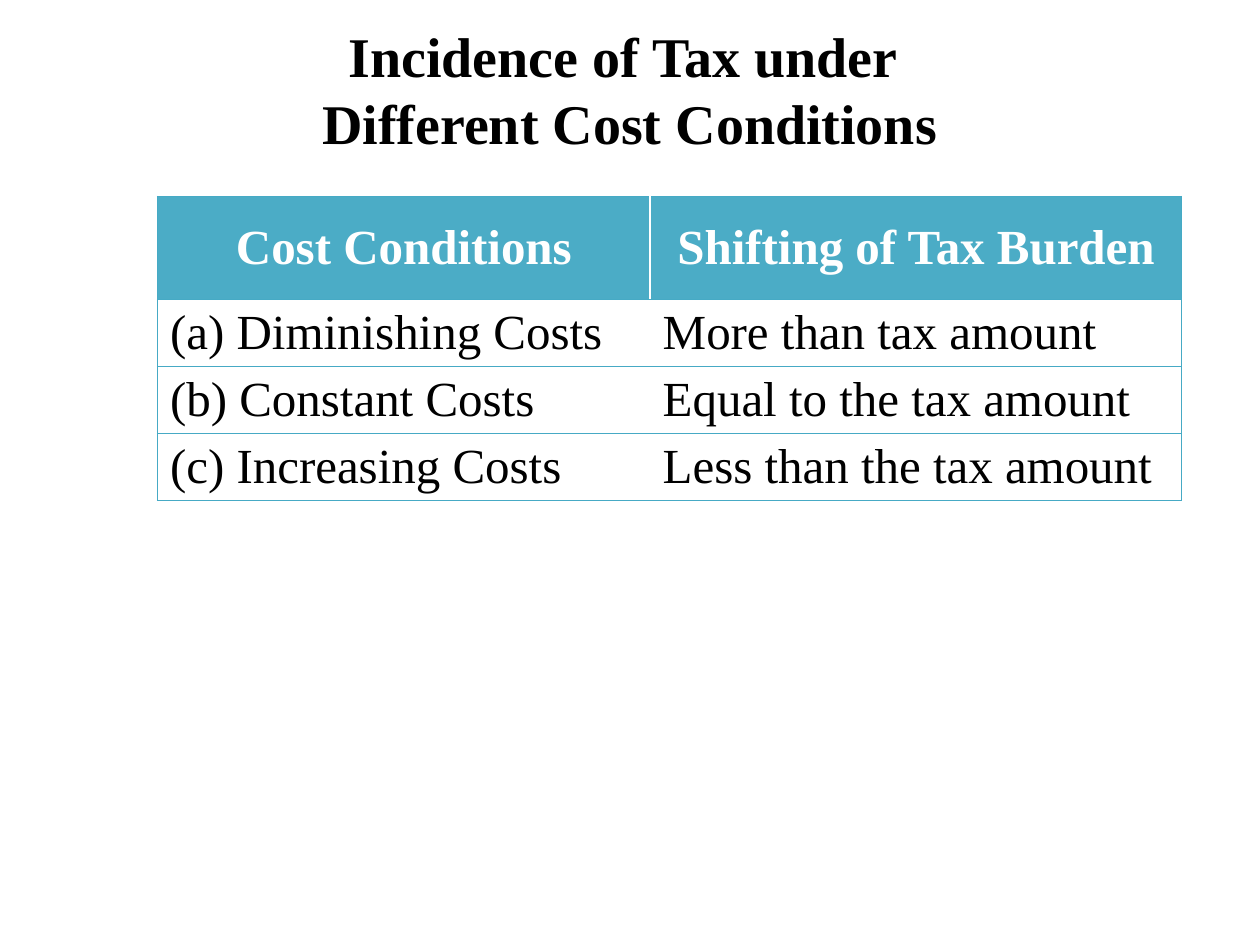
from lxml.etree import SubElement
from pptx import Presentation
from pptx.dml.color import RGBColor
from pptx.enum.text import MSO_ANCHOR as Anchor, PP_ALIGN as Align
from pptx.oxml.ns import qn
from pptx.util import Inches, Pt

TITLE = "Incidence of Tax under \vDifferent Cost Conditions"
ROWS = [
    ("Cost Conditions", "Shifting of Tax Burden"),
    ("(a) Diminishing Costs", "More than tax amount"),
    ("(b) Constant Costs", "Equal to the tax amount"),
    ("(c) Increasing Costs", "Less than the tax amount"),
]
COLUMN_WIDTHS = (3.91, 4.22)
HEADER_HEIGHT, ROW_HEIGHT = 0.82, 0.53
FONT = "Times New Roman"
BLACK, WHITE, TEAL, BORDER = "000000", "FFFFFF", "4BACC6", "46AAC5"


def color(value):
    return RGBColor.from_string(value)


def format_text(frame, size, ink, bold, align):
    frame.vertical_anchor = Anchor.MIDDLE
    for para in frame.paragraphs:
        para.alignment = align
        for span in para.runs:
            span.font.name = FONT
            span.font.size = Pt(size)
            span.font.bold = bold
            span.font.color.rgb = color(ink)


def add_borders(cell, sides):
    properties = cell._tc.get_or_add_tcPr()
    for side in sides:
        line = SubElement(properties, qn(f"a:ln{side}"), w=str(Pt(0.75)))
        fill = SubElement(line, qn("a:solidFill"))
        SubElement(fill, qn("a:srgbClr"), val=BORDER)


def add_title(page):
    title = page.shapes.title
    title.left, title.top = Inches(0.5), Inches(0.16)
    title.width, title.height = Inches(9), Inches(1.09)
    title.text_frame.text = TITLE
    format_text(title.text_frame, 32, BLACK, True, Align.CENTER)


def add_cost_table(page):
    heights = [HEADER_HEIGHT] + [ROW_HEIGHT] * (len(ROWS) - 1)
    table = page.shapes.add_table(
        len(ROWS), len(COLUMN_WIDTHS), Inches(1.25), Inches(1.56),
        Inches(sum(COLUMN_WIDTHS)), Inches(sum(heights))).table
    table.horz_banding = False
    for column, width in zip(table.columns, COLUMN_WIDTHS):
        column.width = Inches(width)
    for r, (texts, height) in enumerate(zip(ROWS, heights)):
        table.rows[r].height = Inches(height)
        header = r == 0
        for c, text in enumerate(texts):
            cell = table.cell(r, c)
            cell.margin_top = cell.margin_bottom = Inches(0.04)
            cell.text_frame.text = text
            format_text(cell.text_frame, 28, WHITE if header else BLACK,
                        header, Align.CENTER if header else Align.JUSTIFY)
            cell.vertical_anchor = Anchor.MIDDLE
            add_borders(cell, "LTB" if c == 0 else "RTB")
            cell.fill.solid()
            cell.fill.fore_color.rgb = color(TEAL if header else WHITE)


def main():
    deck = Presentation()
    deck.slide_width, deck.slide_height = Inches(10), Inches(7.5)
    page = deck.slides.add_slide(deck.slide_layouts[5])
    add_title(page)
    add_cost_table(page)
    deck.save("out.pptx")


if __name__ == "__main__":
    main()
